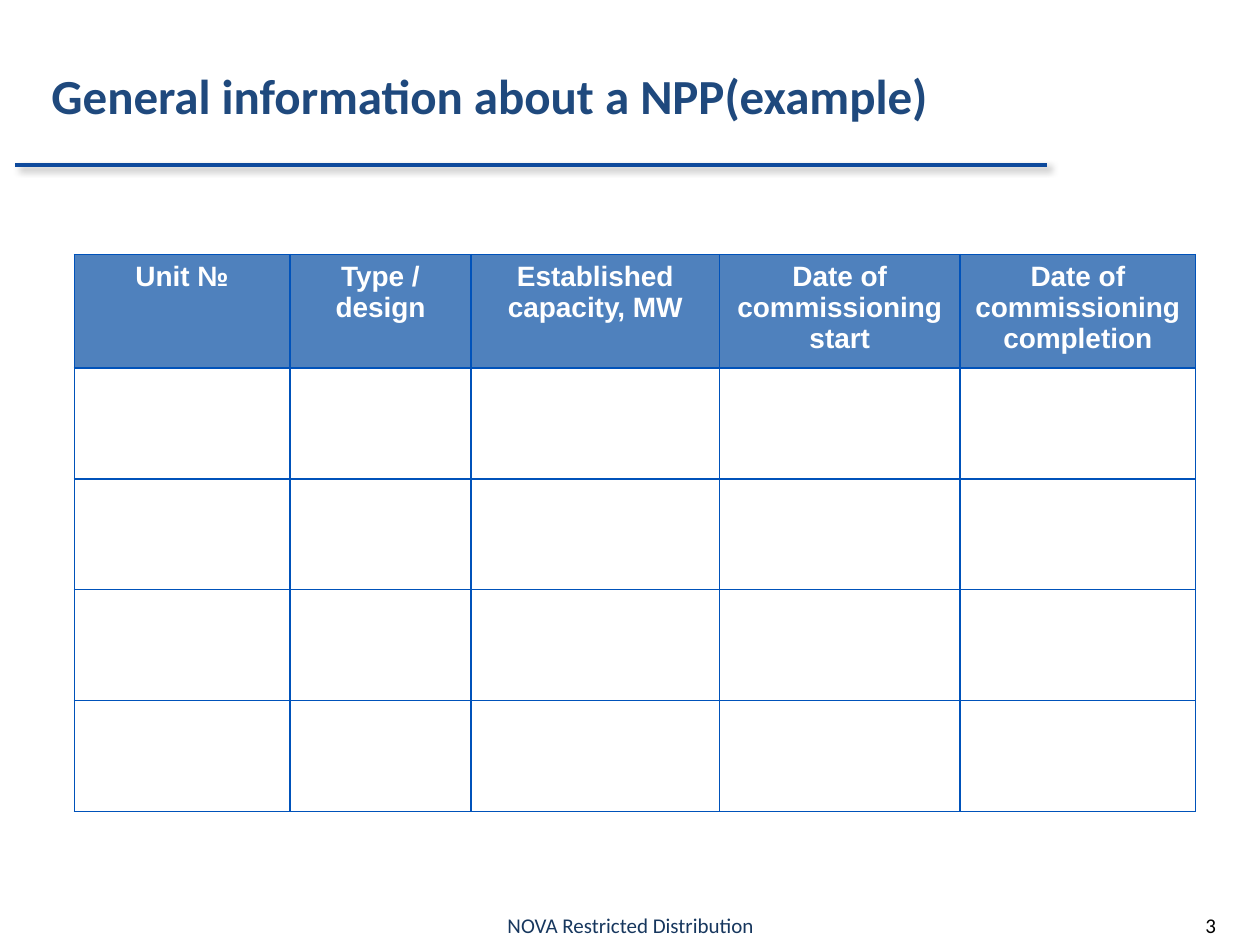
import pptx
import pptx.util
import pptx.dml.color
import pptx.enum.shapes
import pptx.enum.text
import pptx.oxml
import pptx.oxml.ns
from lxml import etree

Inches = pptx.util.Inches
Pt = pptx.util.Pt
RGBColor = pptx.dml.color.RGBColor
ALIGN = pptx.enum.text.PP_ALIGN

# Content
TITLE = "General information about a NPP(example)"
FOOTER = "NOVA Restricted Distribution"
PAGE_NUMBER = "3"
COLUMNS = [
    ("Unit №", 1.71),
    ("Type / design", 1.44),
    ("Established capacity, MW", 1.97),
    ("Date of commissioning start", 1.91),
    ("Date of commissioning completion", 1.87),
]
EMPTY_ROWS = 4
HEADER_HEIGHT, ROW_HEIGHT = 0.8, 0.88

# Colours
TITLE_BLUE = RGBColor(0x1F, 0x49, 0x7D)
RULE_BLUE = RGBColor(0x0D, 0x49, 0x9C)
FOOTER_BLUE = RGBColor(0x17, 0x37, 0x5E)
HEADER_BLUE = RGBColor(0x4F, 0x81, 0xBD)
BORDER_BLUE = RGBColor(0x00, 0x52, 0xBA)
WHITE = RGBColor(0xFF, 0xFF, 0xFF)
BLACK = RGBColor(0, 0, 0)

NAMESPACE = pptx.oxml.ns.nsdecls("a")
RULE_SHADOW = (
    f'<a:effectLst {NAMESPACE}>'
    f'<a:outerShdw blurRad="{Pt(4)}" dist="{Pt(3)}" dir="2700000" rotWithShape="0">'
    '<a:srgbClr val="000000"><a:alpha val="40000"/></a:srgbClr>'
    '</a:outerShdw></a:effectLst>'
)


def set_text(frame, text, font_name, size, color, align, bold=False):
    frame.text = text
    paragraph = frame.paragraphs[0]
    paragraph.alignment = align
    font = paragraph.font
    font.name, font.size, font.bold = font_name, Pt(size), bold
    font.color.rgb = color


def add_label(slide, box, text, size, color, align, bold=False):
    frame = slide.shapes.add_textbox(*map(Inches, box)).text_frame
    frame.word_wrap = True
    frame.vertical_anchor = pptx.enum.text.MSO_ANCHOR.MIDDLE
    set_text(frame, text, "Calibri", size, color, align, bold)


def add_borders(cell):
    properties = cell._tc.get_or_add_tcPr()
    for position, side in enumerate(("lnL", "lnR", "lnT", "lnB")):
        properties.insert(position, pptx.oxml.parse_xml(
            f'<a:{side} {NAMESPACE} w="{Pt(1)}"><a:solidFill>'
            f'<a:srgbClr val="{BORDER_BLUE}"/></a:solidFill></a:{side}>'))


def add_unit_table(slide):
    rows = 1 + EMPTY_ROWS
    width = sum(column_width for _, column_width in COLUMNS)
    height = HEADER_HEIGHT + EMPTY_ROWS * ROW_HEIGHT
    table = slide.shapes.add_table(
        rows, len(COLUMNS), Inches(0.59), Inches(2.02),
        Inches(width), Inches(height)).table
    table.horz_banding = False

    for row_index, row in enumerate(table.rows):
        row.height = Inches(ROW_HEIGHT if row_index else HEADER_HEIGHT)
        for cell in row.cells:
            if row_index:
                cell.fill.background()
            else:
                cell.fill.solid()
                cell.fill.fore_color.rgb = HEADER_BLUE
            add_borders(cell)

    for index, (heading, column_width) in enumerate(COLUMNS):
        table.columns[index].width = Inches(column_width)
        set_text(table.cell(0, index).text_frame, heading,
                 "Arial", 16, WHITE, ALIGN.CENTER, bold=True)


def main():
    presentation = pptx.Presentation()
    presentation.slide_width, presentation.slide_height = Inches(10), Inches(7.5)
    slide = presentation.slides.add_slide(presentation.slide_layouts[6])

    # Rule under the title
    rule = slide.shapes.add_connector(
        pptx.enum.shapes.MSO_CONNECTOR.STRAIGHT,
        Inches(0.12), Inches(1.31), Inches(8.31), Inches(1.31))
    rule.line.color.rgb = RULE_BLUE
    rule.line.width = Pt(2)
    rule._element.spPr.append(etree.fromstring(RULE_SHADOW))

    # Title, footer and page number
    add_label(slide, (0.31, 0.23, 7.99, 1.05), TITLE, 28, TITLE_BLUE, ALIGN.LEFT, bold=True)
    add_label(slide, (1.15, 7.19, 7.71, 0.31), FOOTER, 12, FOOTER_BLUE, ALIGN.CENTER)
    add_label(slide, (8.93, 7.19, 0.82, 0.31), PAGE_NUMBER, 12, BLACK, ALIGN.RIGHT)

    # Table of units
    add_unit_table(slide)

    presentation.save("out.pptx")


if __name__ == "__main__":
    main()
